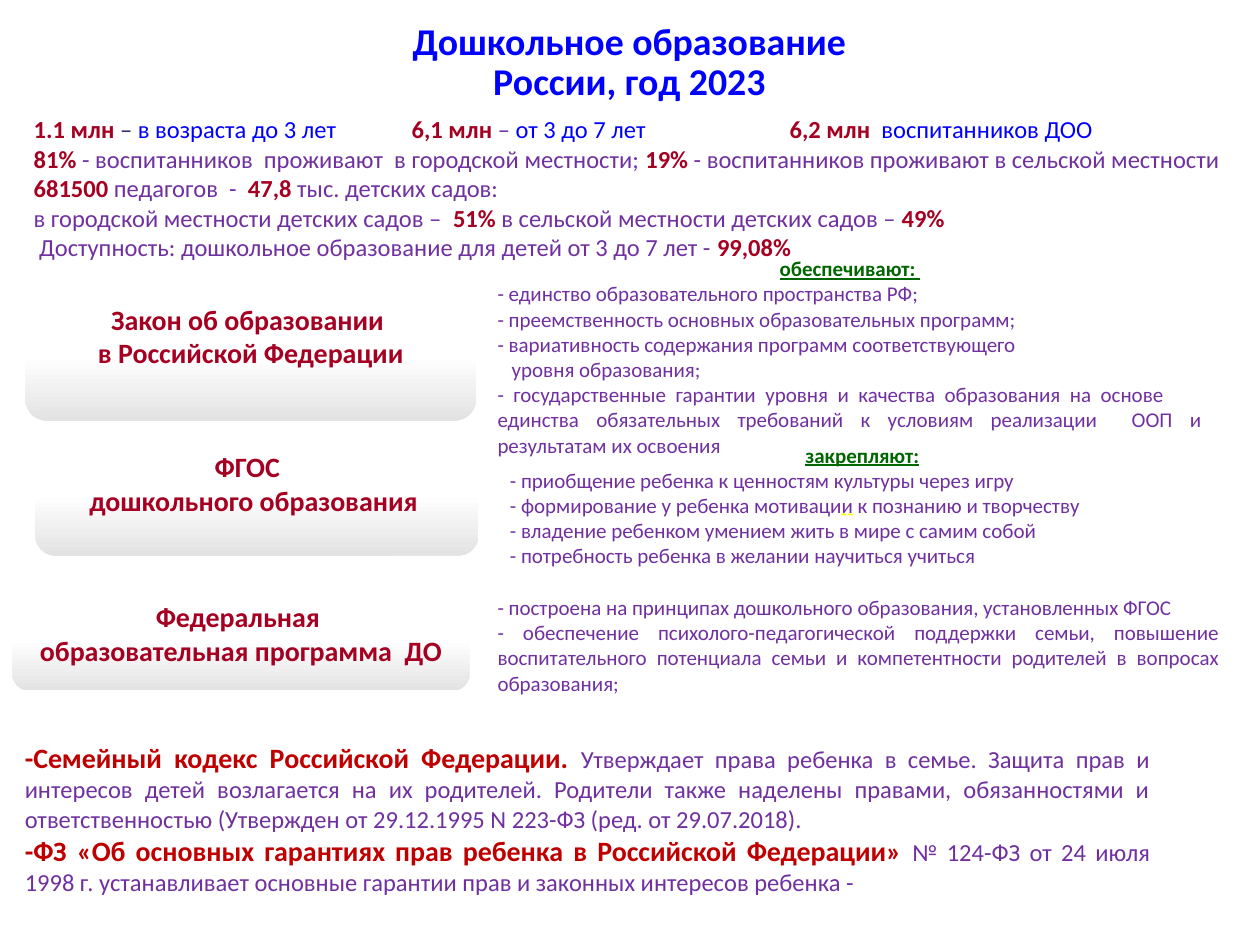
from dataclasses import dataclass
from typing import NamedTuple

from lxml.etree import SubElement
from pptx import Presentation
from pptx.dml.color import RGBColor
from pptx.enum.shapes import MSO_SHAPE as Shape
from pptx.enum.text import MSO_ANCHOR as Anchor, MSO_AUTO_SIZE as AutoSize, PP_ALIGN as Align
from pptx.oxml.ns import qn
from pptx.util import Cm, Pt

BLUE, CRIMSON, RED = "0000FF", "A50021", "C00000"
PURPLE, GREEN, NAVY, YELLOW = "7030A0", "006600", "262673", "FFFF00"


class Area(NamedTuple):
    left: float
    top: float
    width: float
    height: float

    def lengths(self) -> list:
        return [Cm(value) for value in self]


@dataclass
class Span:
    text: str
    color: str = PURPLE
    size: float = 12
    bold: bool = False
    underline: bool = False
    italic: bool = False
    font: str = "Calibri"


@dataclass
class Para:
    spans: list
    align: Align = Align.JUSTIFY
    before: float = 0
    tabs: tuple = ()


@dataclass
class Card:
    area: Area
    lines: tuple = ()


def rgb(color: str) -> RGBColor:
    return RGBColor.from_string(color)


def format_run(run, span: Span) -> None:
    font = run.font
    font.name, font.size = span.font, Pt(span.size)
    font.bold, font.italic, font.underline = span.bold, span.italic, span.underline
    font.color.rgb = rgb(span.color)


def set_tabs(paragraph, stops: tuple) -> None:
    tab_list = SubElement(paragraph._p.get_or_add_pPr(), qn("a:tabLst"))
    for stop in stops:
        SubElement(tab_list, qn("a:tab"), pos=str(Cm(stop)), algn="l")


def write(frame, paras: list) -> None:
    frame.word_wrap = True
    for index, para in enumerate(paras):
        paragraph = frame.add_paragraph() if index else frame.paragraphs[0]
        paragraph.alignment = para.align
        if para.before:
            paragraph.space_before = Pt(para.before)
        if para.tabs:
            set_tabs(paragraph, para.tabs)
        for span in para.spans:
            if span.text.startswith("\n"):
                paragraph.add_line_break()
            run = paragraph.add_run()
            run.text = span.text.lstrip("\n")
            format_run(run, span)


def add_text(page, area: Area, paras: list):
    box = page.shapes.add_textbox(*area.lengths())
    write(box.text_frame, paras)
    return box


def add_card(page, card: Card) -> None:
    box = page.shapes.add_shape(Shape.ROUNDED_RECTANGLE, *card.area.lengths())
    box.shadow.inherit = False
    box.line.fill.background()
    box.fill.gradient()
    box.fill.gradient_angle = 270
    for stop, position, color in zip(box.fill.gradient_stops, (0.5, 1), ("FFFFFF", "E3E3E3")):
        stop.position = position
        stop.color.rgb = rgb(color)
    if card.lines:
        box.text_frame.vertical_anchor = Anchor.TOP
        write(box.text_frame, headings(card.lines))


def headings(lines: tuple) -> list:
    return [Para([Span(line, CRIMSON, 16, True)], Align.CENTER) for line in lines]


def points(lines: tuple) -> list:
    return [Para([Span(line)]) for line in lines]


def label(text: str) -> Para:
    return Para([Span(text, GREEN, bold=True, underline=True)], Align.CENTER)


def fact(text: str) -> Span:
    return Span(text, CRIMSON, 14, True)


def note(text: str, color: str = PURPLE) -> Span:
    return Span(text, color, 14)


def law(name: str, summary: str) -> Para:
    return Para([Span(name, RED, 16, True), note(summary)])


STATISTICS = [
    Para([fact("1.1 млн "), note("– ", NAVY), note("в возраста до 3 лет\t", BLUE),
          fact("6,1 млн "), note("– "), note("от 3 до 7 лет\t\t", BLUE),
          fact("6,2 млн  "), note("воспитанников ДОО", BLUE)],
         tabs=(7.62, 12.7, 15.24)),
    Para([fact("81% "), note("- воспитанников  проживают  в городской местности; "),
          fact("19% "), note("- воспитанников проживают в сельской местности ")]),
    Para([fact("681500"), note(" педагогов  -  "), fact("47,8"), note(" тыс. детских садов:")]),
    Para([note("в городской местности детских садов –  "), fact("51% "),
          note("в сельской местности детских садов – "), fact("49%")], Align.LEFT),
    Para([note(" Доступность: дошкольное образование для детей от 3 до 7 лет - "),
          fact("99,08%")], Align.LEFT),
]
CARDS = [
    Card(Area(0.51, 5.84, 9.09, 2.64), ("Закон об образовании ", "в Российской Федерации")),
    Card(Area(0.71, 8.71, 8.94, 2.49)),
    Card(Area(0.25, 11.86, 9.22, 2.06), ("Федеральная ", "образовательная программа  ДО")),
]
GUARANTEES = [
    label("обеспечивают: "),
    *points((
        "- единство образовательного пространства РФ; ",
        "- преемственность основных образовательных программ;",
        "- вариативность содержания программ соответствующего ",
        "   уровня образования;",
        "- государственные гарантии уровня и качества образования на основе     единства "
        "обязательных требований к условиям реализации  ООП и результатам их освоения",
    )),
    Para([Span("\n-- ", YELLOW, italic=True, font="Arial")], Align.CENTER, 2.4),
]
STANDARD = [
    label("закрепляют:"),
    *points((
        "- приобщение ребенка к ценностям культуры через игру",
        "- формирование у ребенка мотивации к познанию и творчеству",
        "- владение ребенком умением жить в мире с самим собой ",
        "- потребность ребенка в желании научиться учиться",
    )),
]
PROGRAMME = points((
    "- построена на принципах дошкольного образования, установленных ФГОС ",
    "- обеспечение психолого-педагогической поддержки семьи, повышение воспитательного "
    "потенциала семьи и компетентности родителей в вопросах образования;",
))
LAWS = [
    law("-Семейный кодекс Российской Федерации. ",
        "Утверждает права ребенка в семье. Защита прав и интересов детей возлагается на их "
        "родителей. Родители также наделены правами, обязанностями и ответственностью "
        "(Утвержден от 29.12.1995 N 223-ФЗ (ред. от 29.07.2018)."),
    law("-ФЗ «Об основных гарантиях прав ребенка в Российской Федерации» ",
        "№ 124-ФЗ от 24 июля 1998 г. устанавливает основные гарантии прав и законных "
        "интересов ребенка -"),
]


def add_title(page) -> None:
    title = page.shapes.title
    title.left, title.top, title.width, title.height = Area(7.29, 0.36, 10.8, 1.83).lengths()
    frame = title.text_frame
    frame.text = "Дошкольное образование России, год 2023"
    frame.auto_size = AutoSize.NONE
    frame.vertical_anchor = Anchor.MIDDLE
    paragraph = frame.paragraphs[0]
    paragraph.alignment, paragraph.line_spacing = Align.CENTER, 0.9
    format_run(paragraph.runs[0], Span("", BLUE, 21.6, True))


def main() -> None:
    deck = Presentation()
    deck.slide_width, deck.slide_height = Cm(25.4), Cm(19.05)
    page = deck.slides.add_slide(deck.slide_layouts[5])
    add_title(page)
    add_text(page, Area(0.43, 2.18, 24.41, 3.25), STATISTICS)
    for card in CARDS:
        add_card(page, card)
    standard_name = add_text(page, Area(1.09, 8.94, 7.92, 1.6),
                             headings(("ФГОС ", " дошкольного образования")))
    standard_name.text_frame.vertical_anchor = Anchor.MIDDLE
    add_text(page, Area(9.78, 5.03, 14.71, 5.16), GUARANTEES)
    add_text(page, Area(10.03, 8.79, 14.71, 2.82), STANDARD)
    add_text(page, Area(0.25, 14.81, 23.19, 3.51), LAWS)
    add_text(page, Area(9.78, 11.86, 15.06, 2.31), PROGRAMME)
    deck.save("out.pptx")


if __name__ == "__main__":
    main()
